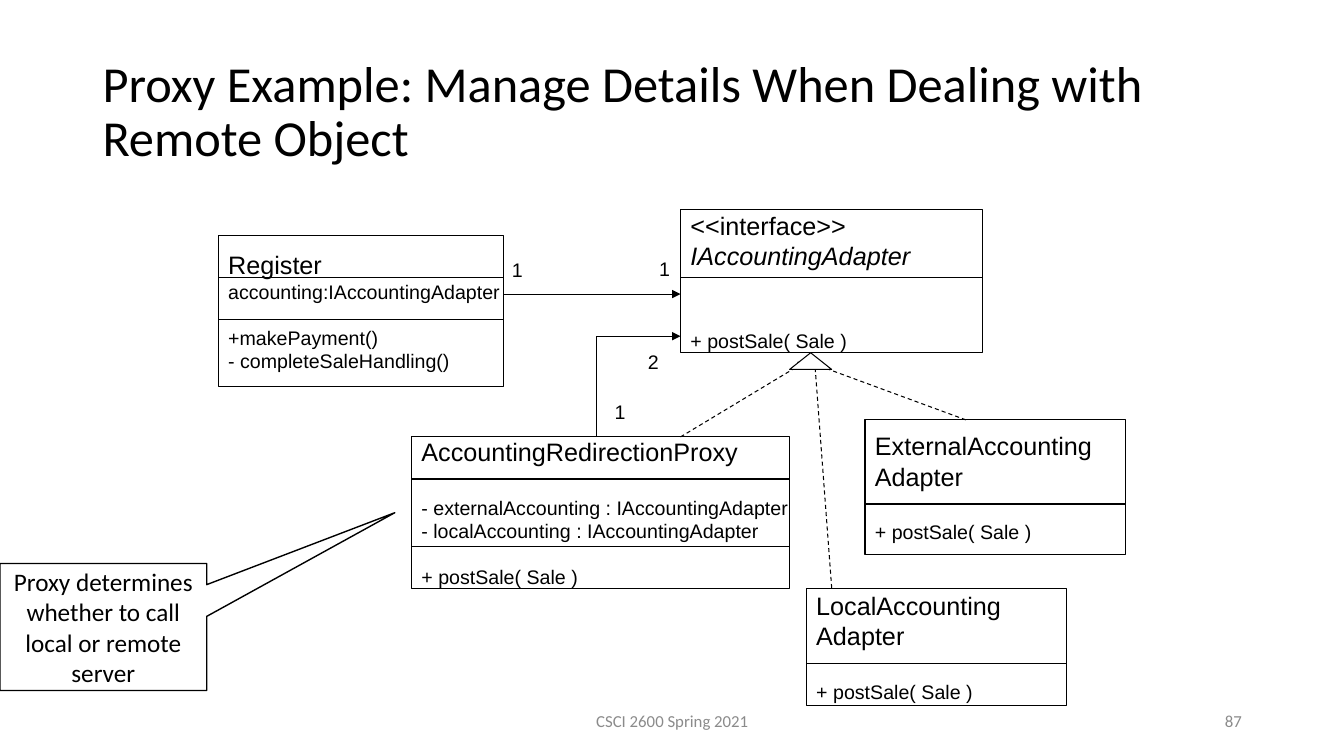
from dataclasses import dataclass

from lxml import etree
from pptx import Presentation
from pptx.dml.color import RGBColor
from pptx.enum.dml import MSO_LINE
from pptx.enum.shapes import MSO_CONNECTOR, MSO_SHAPE
from pptx.enum.text import MSO_ANCHOR, MSO_AUTO_SIZE, PP_ALIGN
from pptx.oxml.ns import qn
from pptx.util import Cm, Pt

LEFT, CENTER, RIGHT = PP_ALIGN.LEFT, PP_ALIGN.CENTER, PP_ALIGN.RIGHT
TOP, MIDDLE = MSO_ANCHOR.TOP, MSO_ANCHOR.MIDDLE
RECT, TRIANGLE = MSO_SHAPE.RECTANGLE, MSO_SHAPE.ISOSCELES_TRIANGLE
CALLOUT = MSO_SHAPE.RECTANGULAR_CALLOUT
STRAIGHT, DASH, NO_FIT = MSO_CONNECTOR.STRAIGHT, MSO_LINE.DASH, MSO_AUTO_SIZE.NONE


@dataclass(frozen=True)
class Theme:
    ink: RGBColor = RGBColor(0, 0, 0)
    paper: RGBColor = RGBColor(255, 255, 255)
    muted: RGBColor = RGBColor(0x8B, 0x8B, 0x8B)
    body_font: str = "Calibri"
    uml_font: str = "Arial"
    title: int = 36
    name: int = 18
    member: int = 14
    footer: int = 12
    thin: float = 0.75
    callout_line: float = 1


T = Theme()

TITLE = "Proxy Example: Manage Details When Dealing with Remote Object"
TITLE_BOX = (2.33, 1.01, 29.21, 3.68)
POST_SALE = "+ postSale( Sale )"

# (text, size, space before, italic)
CLASSES = [
    ((5.5, 5.93, 7.2, 3.81), (6.99, 8.04), [
        ("Register", T.name, 0, False),
        ("accounting:IAccountingAdapter", T.member, 0, False),
        ("+makePayment()", T.member, 16, False),
        ("- completeSaleHandling()", T.member, 0, False)]),
    ((17.15, 5.29, 7.62, 3.6), (6.99,), [
        ("<<interface>>", T.name, 0, False),
        ("IAccountingAdapter", T.name, 0, True),
        (POST_SALE, T.member, 41.4, False)]),
    ((10.37, 11.01, 9.53, 3.81), (12.07, 13.76), [
        ("AccountingRedirectionProxy", T.name, 0, False),
        ("- externalAccounting : IAccountingAdapter", T.member, 20.7, False),
        ("- localAccounting : IAccountingAdapter", T.member, 0, False),
        (POST_SALE, T.member, 16, False)]),
    ((21.8, 10.58, 6.56, 3.39), (12.7,), [
        ("ExternalAccounting\nAdapter", T.name, 0, False),
        (POST_SALE, T.member, 20.7, False)]),
    ((20.32, 14.82, 6.56, 2.96), (16.72,), [
        ("LocalAccounting\nAdapter", T.name, 0, False),
        (POST_SALE, T.member, 20.7, False)]),
]

# (from, to, arrow, dashed)
RELATIONS = [
    ((12.7, 7.41), (17.15, 7.41), True, False),
    ((15.03, 8.47), (17.15, 8.47), True, False),
    ((15.03, 8.47), (15.03, 11.01), False, False),
    ((17.15, 11.01), (20.32, 9.1), True, True),
    ((24.34, 10.58), (20.32, 9.1), True, True),
    ((20.96, 14.82), (20.53, 9.1), True, True),
]

MULTIPLICITIES = [("1", 12.65, 6.38), ("1", 16.36, 6.35),
                  ("1", 15.24, 9.96), ("2", 16.08, 8.69)]
LABEL_SIZE = (0.79, 0.84)
REALIZATION_BOX = (19.9, 8.89, 1.06, 0.42)

NOTE = "Proxy determines whether to call local or remote server"
NOTE_BOX = (0, 14.2, 5.21, 3.2)
NOTE_TIP = (1.41, -0.9)

FOOTERS = [("CSCI 2600 Spring 2021", (11.23, 17.65, 11.43, 1.02), CENTER),
           ("87", (23.93, 17.65, 7.62, 1.02), RIGHT)]


def cm(values):
    return [Cm(v) for v in values]


def setup(tf, anchor, wrap):
    tf.auto_size = NO_FIT
    tf.vertical_anchor = anchor
    tf.word_wrap = wrap


def write(p, text, size, font, color=T.ink, align=LEFT, italic=False):
    p.alignment = align
    for i, part in enumerate(text.split("\n")):
        if i:
            p.add_line_break()
        r = p.add_run()
        r.text = part
        r.font.size = Pt(size)
        r.font.name = font
        r.font.italic = italic
        r.font.color.rgb = color


def add_shape(s, kind, box, width=T.thin, fill=None):
    sp = s.shapes.add_shape(kind, *cm(box))
    sp.shadow.inherit = False
    if fill is None:
        sp.fill.background()
    else:
        sp.fill.solid()
        sp.fill.fore_color.rgb = fill
    sp.line.color.rgb = T.ink
    sp.line.width = Pt(width)
    return sp


def add_line(s, start, end, arrow=False, dashed=False):
    c = s.shapes.add_connector(STRAIGHT, *cm(start + end))
    c.line.color.rgb = T.ink
    c.line.width = Pt(T.thin)
    if dashed:
        c.line.dash_style = DASH
    if arrow:
        etree.SubElement(c.line._get_or_add_ln(), qn("a:tailEnd"), type="triangle")
    etree.SubElement(c._element.spPr, qn("a:effectLst"))


def add_text(s, text, box, size, font, color, align, anchor, wrap):
    tf = s.shapes.add_textbox(*cm(box)).text_frame
    setup(tf, anchor, wrap)
    write(tf.paragraphs[0], text, size, font, color, align)


def add_class(s, box, dividers, lines):
    tf = add_shape(s, RECT, box).text_frame
    setup(tf, MIDDLE, False)
    for i, (text, size, gap, italic) in enumerate(lines):
        p = tf.add_paragraph() if i else tf.paragraphs[0]
        p.space_before = Pt(gap)
        write(p, text, size, T.uml_font, italic=italic)
    left, _, width, _ = box
    for y in dividers:
        add_line(s, (left, y), (left + width, y))


def main():
    prs = Presentation()
    prs.slide_width, prs.slide_height = Cm(33.87), Cm(19.05)
    s = prs.slides.add_slide(prs.slide_layouts[5])

    title = s.shapes.title
    title.left, title.top, title.width, title.height = cm(TITLE_BOX)
    setup(title.text_frame, MIDDLE, True)
    p = title.text_frame.paragraphs[0]
    p.line_spacing = 0.9
    write(p, TITLE, T.title, T.body_font)

    for uml_class in CLASSES:
        add_class(s, *uml_class)
    for relation in RELATIONS:
        add_line(s, *relation)
    for text, x, y in MULTIPLICITIES:
        add_text(s, text, (x, y) + LABEL_SIZE, T.member, T.uml_font, T.ink, LEFT, TOP, False)
    add_shape(s, TRIANGLE, REALIZATION_BOX, fill=T.paper)

    note = add_shape(s, CALLOUT, NOTE_BOX, T.callout_line, T.paper)
    note.adjustments[0], note.adjustments[1] = NOTE_TIP
    setup(note.text_frame, MIDDLE, True)
    write(note.text_frame.paragraphs[0], NOTE, T.name, T.body_font, align=CENTER)

    for text, box, align in FOOTERS:
        add_text(s, text, box, T.footer, T.body_font, T.muted, align, MIDDLE, True)

    prs.save("out.pptx")


if __name__ == "__main__":
    main()
